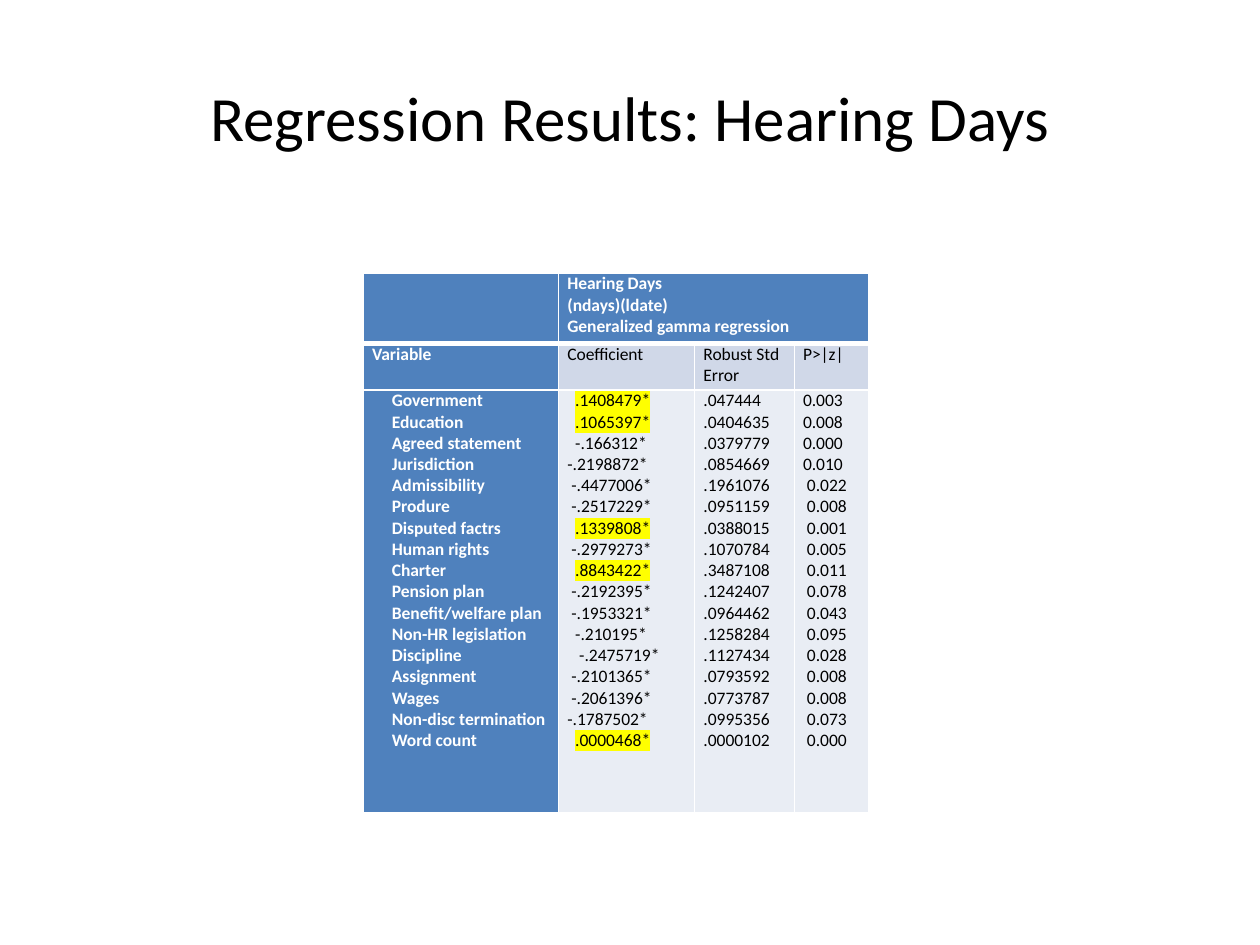
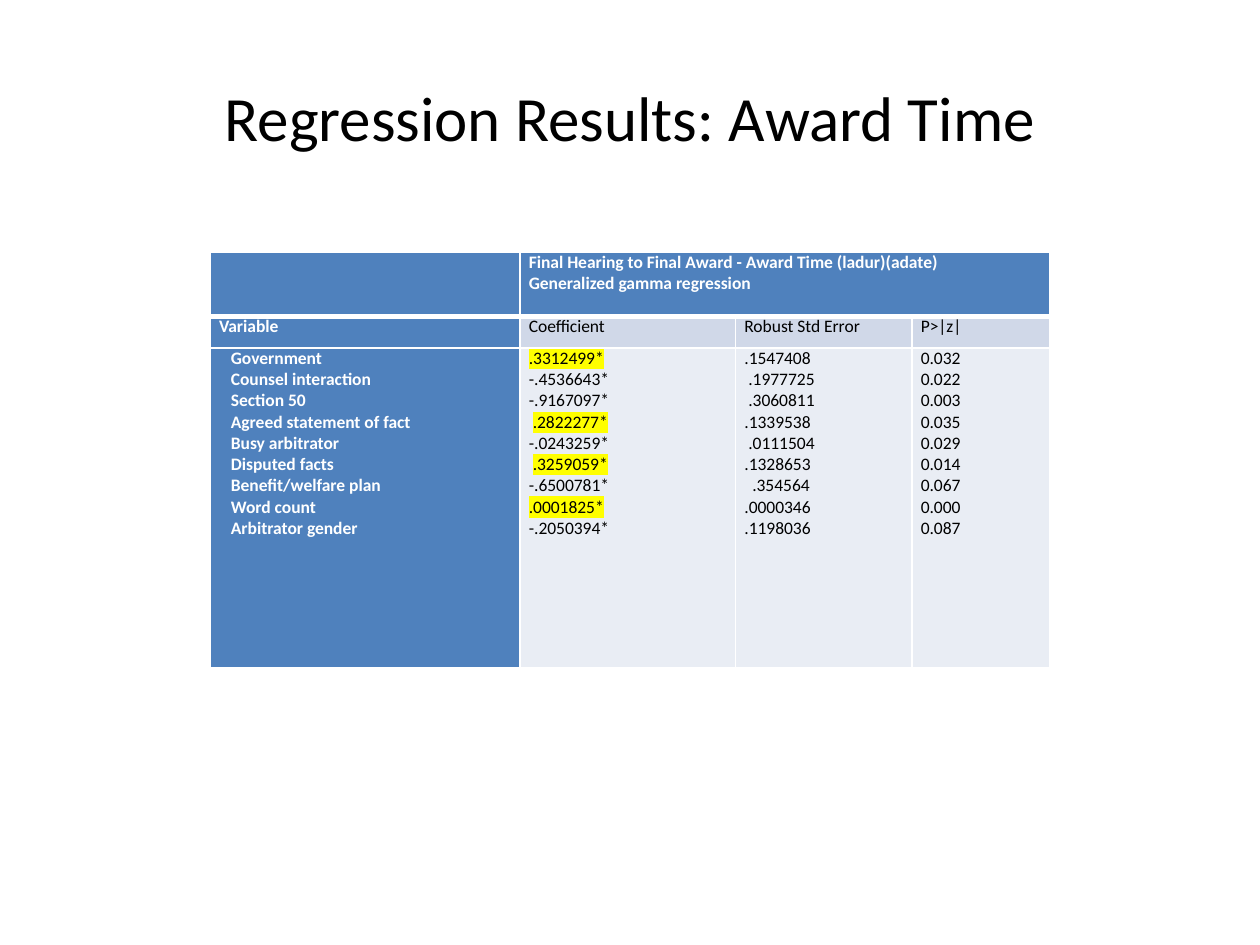
from lxml import etree
from pptx import Presentation
from pptx.dml.color import RGBColor
from pptx.enum import text
from pptx.oxml.ns import qn
from pptx.util import Pt

FONT = "Calibri"
BLACK = RGBColor(0x00, 0x00, 0x00)
WHITE = RGBColor(0xFF, 0xFF, 0xFF)
BLUE = RGBColor(0x4F, 0x81, 0xBD)
HEAD_TINT = RGBColor(0xD0, 0xD8, 0xE8)
BODY_TINT = RGBColor(0xE9, 0xED, 0xF4)
YELLOW = RGBColor(0xFF, 0xFF, 0x00)

TITLE_BOX = (36, 21.6, 648, 90)
INDENT_STEP = 2.26  # points
COLUMN_HEADS = ["Variable", "Coefficient", "Robust Std Error", "P>|z|"]

# Variable, coefficient, standard error, p-value, indent steps of the three numbers
HEARING_ROWS = [
    ("Government", ".1408479*", ".047444", "0.003", (2, 0, 0)),
    ("Education", ".1065397*", ".0404635", "0.008", (2, 0, 0)),
    ("Agreed statement", "-.166312*", ".0379779", "0.000", (2, 0, 0)),
    ("Jurisdiction", "-.2198872*", ".0854669", "0.010", (0, 0, 0)),
    ("Admissibility", "-.4477006*", ".1961076", "0.022", (1, 0, 1)),
    ("Produre", "-.2517229*", ".0951159", "0.008", (1, 0, 1)),
    ("Disputed factrs", ".1339808*", ".0388015", "0.001", (2, 0, 1)),
    ("Human rights", "-.2979273*", ".1070784", "0.005", (1, 0, 1)),
    ("Charter", ".8843422*", ".3487108", "0.011", (2, 0, 1)),
    ("Pension plan", "-.2192395*", ".1242407", "0.078", (1, 0, 1)),
    ("Benefit/welfare plan", "-.1953321*", ".0964462", "0.043", (1, 0, 1)),
    ("Non-HR legislation", "-.210195*", ".1258284", "0.095", (2, 0, 1)),
    ("Discipline", "-.2475719*", ".1127434", "0.028", (3, 0, 1)),
    ("Assignment", "-.2101365*", ".0793592", "0.008", (1, 0, 1)),
    ("Wages", "-.2061396*", ".0773787", "0.008", (1, 0, 1)),
    ("Non-disc termination", "-.1787502*", ".0995356", "0.073", (0, 0, 1)),
    ("Word count", ".0000468*", ".0000102", "0.000", (2, 0, 1)),
]
AWARD_ROWS = [
    ("Government", ".3312499*", ".1547408", "0.032", (0, 0, 0)),
    ("Counsel interaction", "-.4536643*", ".1977725", "0.022", (0, 1, 0)),
    ("Section 50", "-.9167097*", ".3060811", "0.003", (0, 1, 0)),
    ("Agreed statement of fact", ".2822277*", ".1339538", "0.035", (1, 0, 0)),
    ("Busy arbitrator", "-.0243259*", ".0111504", "0.029", (0, 1, 0)),
    ("Disputed facts", ".3259059*", ".1328653", "0.014", (1, 0, 0)),
    ("Benefit/welfare plan", "-.6500781*", ".354564", "0.067", (0, 2, 0)),
    ("Word count", ".0001825*", ".0000346", "0.000", (0, 0, 0)),
    ("Arbitrator gender", "-.2050394*", ".1198036", "0.087", (0, 0, 0)),
]


def format_run(r, size, color, bold=False):
    r.font.name = FONT
    r.font.size = Pt(size)
    r.font.bold = bold
    r.font.color.rgb = color


def highlight(r):
    mark = etree.Element(qn("a:highlight"))
    etree.SubElement(mark, qn("a:srgbClr")).set("val", str(YELLOW))
    r._r.get_or_add_rPr().find(qn("a:solidFill")).addnext(mark)


def style_cell(cell, fill, top=1, bottom=1):
    """Set white borders, fill and margins."""
    tc_pr = cell._tc.get_or_add_tcPr()
    for side, width in (("L", 1), ("R", 1), ("T", top), ("B", bottom)):
        ln = etree.SubElement(tc_pr, qn("a:ln" + side), w=str(Pt(width)))
        line_fill = etree.SubElement(ln, qn("a:solidFill"))
        etree.SubElement(line_fill, qn("a:srgbClr")).set("val", str(WHITE))
    cell.fill.solid()
    cell.fill.fore_color.rgb = fill
    cell.margin_left = cell.margin_right = Pt(5)
    cell.margin_top = cell.margin_bottom = 0


def fill_cell(cell, lines, color, bold=False, indents=None, mark_positive=False):
    """Write one paragraph per line, each with its own indent."""
    tf = cell.text_frame
    tf.text = "\n".join(lines)
    for p, steps in zip(tf.paragraphs, indents or [0] * len(lines)):
        if steps:
            p._p.get_or_add_pPr().set("marL", str(Pt(steps * INDENT_STEP)))
        r = p.runs[0]
        format_run(r, 10, color, bold)
        if mark_positive and not r.text.startswith("-"):
            highlight(r)


def add_title(s, box, title):
    tf = s.shapes.add_textbox(*map(Pt, box)).text_frame
    tf.word_wrap = True
    tf.vertical_anchor = text.MSO_ANCHOR.MIDDLE
    tf.text = title
    p = tf.paragraphs[0]
    p.alignment = text.PP_ALIGN.CENTER
    format_run(p.runs[0], 36, BLACK)


def add_results_table(s, origin, widths, heights, heading, rows, name_indent):
    size = sum(widths), sum(heights)
    table = s.shapes.add_table(3, 4, *map(Pt, (*origin, *size))).table
    table.first_row = table.horz_banding = False
    for column, width in zip(table.columns, widths):
        column.width = Pt(width)
    for row, height in zip(table.rows, heights):
        row.height = Pt(height)

    *columns, number_indents = zip(*rows)
    indents = [[name_indent] * len(rows), *zip(*number_indents)]
    for i in range(4):
        is_name = i == 0
        color = WHITE if is_name else BLACK
        # Model heading, column heads, body
        style_cell(table.cell(0, i), BLUE, bottom=3)
        style_cell(table.cell(1, i), BLUE if is_name else HEAD_TINT, top=3)
        style_cell(table.cell(2, i), BLUE if is_name else BODY_TINT)
        fill_cell(table.cell(1, i), [COLUMN_HEADS[i]], color, is_name)
        fill_cell(table.cell(2, i), columns[i], color, is_name, indents[i],
                  mark_positive=i == 1)
    table.cell(0, 1).merge(table.cell(0, 3))
    fill_cell(table.cell(0, 1), heading, WHITE, True)


def add_results_slide(prs, title, **table_parts):
    s = prs.slides.add_slide(prs.slide_layouts[6])
    add_title(s, TITLE_BOX, title)
    add_results_table(s, **table_parts)


def main():
    prs = Presentation()
    prs.slide_width, prs.slide_height = Pt(720), Pt(540)
    add_results_slide(
        prs, "Regression Results: Hearing Days",
        origin=(207.6, 156.2), widths=(111.6, 77.8, 56.9, 42.5),
        heights=(40.2, 26.6, 241.2), rows=HEARING_ROWS, name_indent=5,
        heading=["Hearing Days", "(ndays)(ldate)", "Generalized gamma regression"])
    add_results_slide(
        prs, "Regression Results: Award Time",
        origin=(120.2, 144), widths=(177, 123.2, 100.8, 78.6),
        heights=(36.8, 18, 183), rows=AWARD_ROWS, name_indent=3,
        heading=["Final Hearing to Final Award - Award Time (ladur)(adate)",
                 "Generalized gamma regression"])
    prs.save("out.pptx")


if __name__ == "__main__":
    main()
